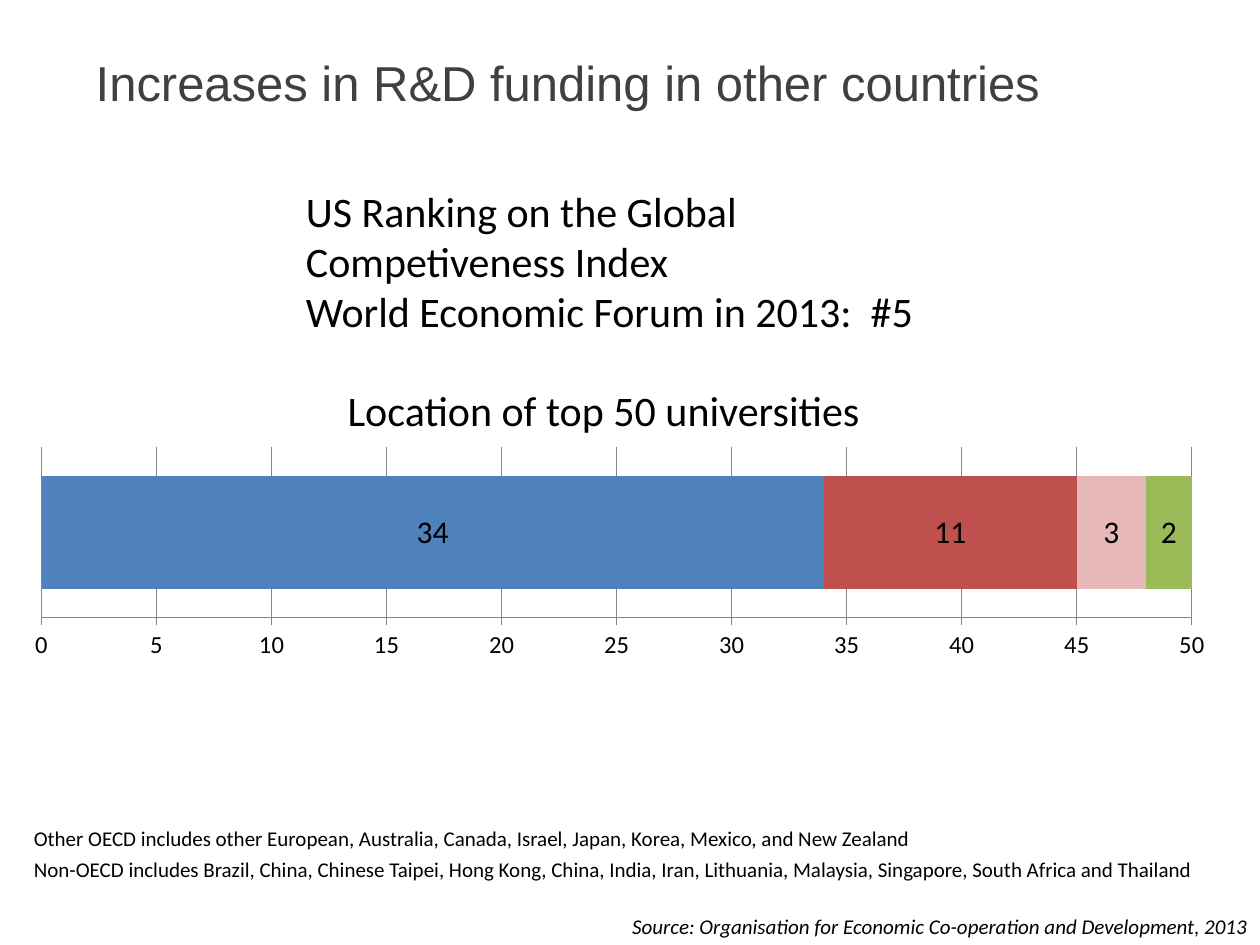
import pptx
import pptx.chart.data
import pptx.dml.color
import pptx.enum.chart
import pptx.enum.text
import pptx.util
from lxml import etree

Inches, Pt = pptx.util.Inches, pptx.util.Pt
RGBColor = pptx.dml.color.RGBColor
ALIGN = pptx.enum.text.PP_ALIGN
BLACK = RGBColor(0x00, 0x00, 0x00)
CHARCOAL = RGBColor(0x40, 0x40, 0x40)
GRID_GRAY = RGBColor(0x86, 0x86, 0x86)
BLUE = RGBColor(0x4F, 0x81, 0xBD)
RED = RGBColor(0xC0, 0x50, 0x4D)
PINK = RGBColor(0xE6, 0xB9, 0xB8)
GREEN = RGBColor(0x9B, 0xBB, 0x59)


def set_font(font, size, color=BLACK, name="Calibri", italic=False):
    values = {"name": name, "size": Pt(size), "bold": False, "italic": italic}
    for key, value in values.items():
        setattr(font, key, value)
    font.color.rgb = color


deck = pptx.Presentation()
deck.slide_width, deck.slide_height = Inches(10), Inches(7.5)
page = deck.slides.add_slide(deck.slide_layouts[5])

# Title
title = page.shapes.title
title.left, title.top = Inches(0.66), Inches(0.37)
title.width, title.height = Inches(8.77), Inches(0.8)
title.text_frame.text = "Increases in R&D funding in other countries"
title.text_frame.vertical_anchor = pptx.enum.text.MSO_ANCHOR.TOP
title_para = title.text_frame.paragraphs[0]
title_para.alignment = ALIGN.LEFT
set_font(title_para.runs[0].font, 28, CHARCOAL, "Arial")

# Chart of university locations: one unnamed series per bar segment
CHART_WIDTH, CHART_HEIGHT = 9.67, 2.25
segments = [(34, BLUE), (11, RED), (3, PINK), (2, GREEN)]
data = pptx.chart.data.CategoryChartData()
data.categories = [""]
for count, color in segments:
    data.add_series("", [count])
chart = page.shapes.add_chart(
    pptx.enum.chart.XL_CHART_TYPE.BAR_STACKED, Inches(0.08), Inches(3.5),
    Inches(CHART_WIDTH), Inches(CHART_HEIGHT), data).chart
chart.has_title = False
chart.has_legend = False
set_font(chart.font, 18)

plot = chart.plots[0]
for key, value in {"gap_width": 50, "overlap": 100,
                   "vary_by_categories": False}.items():
    setattr(plot, key, value)
for series, (count, color) in zip(plot.series, segments):
    series.format.fill.solid()
    series.format.fill.fore_color.rgb = color
    labels = series.data_labels
    labels.show_value = True
    labels.position = pptx.enum.chart.XL_LABEL_POSITION.CENTER
    set_font(labels.font, 18)

chart.category_axis.visible = False
axis = chart.value_axis
for key, value in {"minimum_scale": 0, "maximum_scale": 50, "major_unit": 5,
                   "has_major_gridlines": True,
                   "major_tick_mark": pptx.enum.chart.XL_TICK_MARK.OUTSIDE}.items():
    setattr(axis, key, value)
set_font(axis.tick_labels.font, 14)
for line in (axis.format.line, axis.major_gridlines.format.line):
    line.color.rgb = GRID_GRAY
    line.width = Pt(0.75)

# Fixed inner plot area, as fractions of the chart frame
CHART_NS = "http://schemas.openxmlformats.org/drawingml/2006/chart"
plot_area = chart.element.find(f".//{{{CHART_NS}}}plotArea")
for old_layout in plot_area.findall(f"{{{CHART_NS}}}layout"):
    plot_area.remove(old_layout)
layout = etree.Element(f"{{{CHART_NS}}}layout")
manual = etree.SubElement(layout, f"{{{CHART_NS}}}manualLayout")
for tag, value in [("layoutTarget", "inner"), ("xMode", "edge"), ("yMode", "edge"),
                   ("x", 0.25 / CHART_WIDTH), ("y", 0.05 / CHART_HEIGHT),
                   ("w", 9.13 / CHART_WIDTH), ("h", 1.35 / CHART_HEIGHT)]:
    etree.SubElement(manual, f"{{{CHART_NS}}}{tag}").set("val", str(value))
plot_area.insert(0, layout)

# Text boxes: left, top, width, height, size, alignment, italic, paragraphs
texts = [
    (4.25, 7.2, 5.75, 0.3, 12, ALIGN.RIGHT, True,
     ["Source: Organisation for Economic Co-operation and Development, 2013"]),
    (0.17, 6.75, 9.58, 0.3, 12, ALIGN.LEFT, False,
     ["Non-OECD includes Brazil, China, Chinese Taipei, Hong Kong, China, India, "
      "Iran, Lithuania, Malaysia, Singapore, South Africa and Thailand"]),
    (0.17, 6.5, 7.25, 0.3, 12, ALIGN.LEFT, False,
     ["Other OECD includes other European, Australia, Canada, Israel, Japan, "
      "Korea, Mexico, and New Zealand"]),
    (2.33, 1.42, 5.33, 1.31, 24, ALIGN.LEFT, False,
     ["US Ranking on the Global Competiveness Index",
      "World Economic Forum in 2013:  #5"]),
    (1.83, 3, 5.92, 0.5, 24, ALIGN.CENTER, False,
     ["Location of top 50 universities"]),
]
for left, top, width, height, size, alignment, italic, lines in texts:
    box = page.shapes.add_textbox(Inches(left), Inches(top), Inches(width), Inches(height))
    frame = box.text_frame
    frame.word_wrap = True
    frame.auto_size = pptx.enum.text.MSO_AUTO_SIZE.SHAPE_TO_FIT_TEXT
    frame.text = "\n".join(lines)
    for para in frame.paragraphs:
        para.alignment = alignment
        set_font(para.runs[0].font, size, italic=italic)

deck.save("out.pptx")
